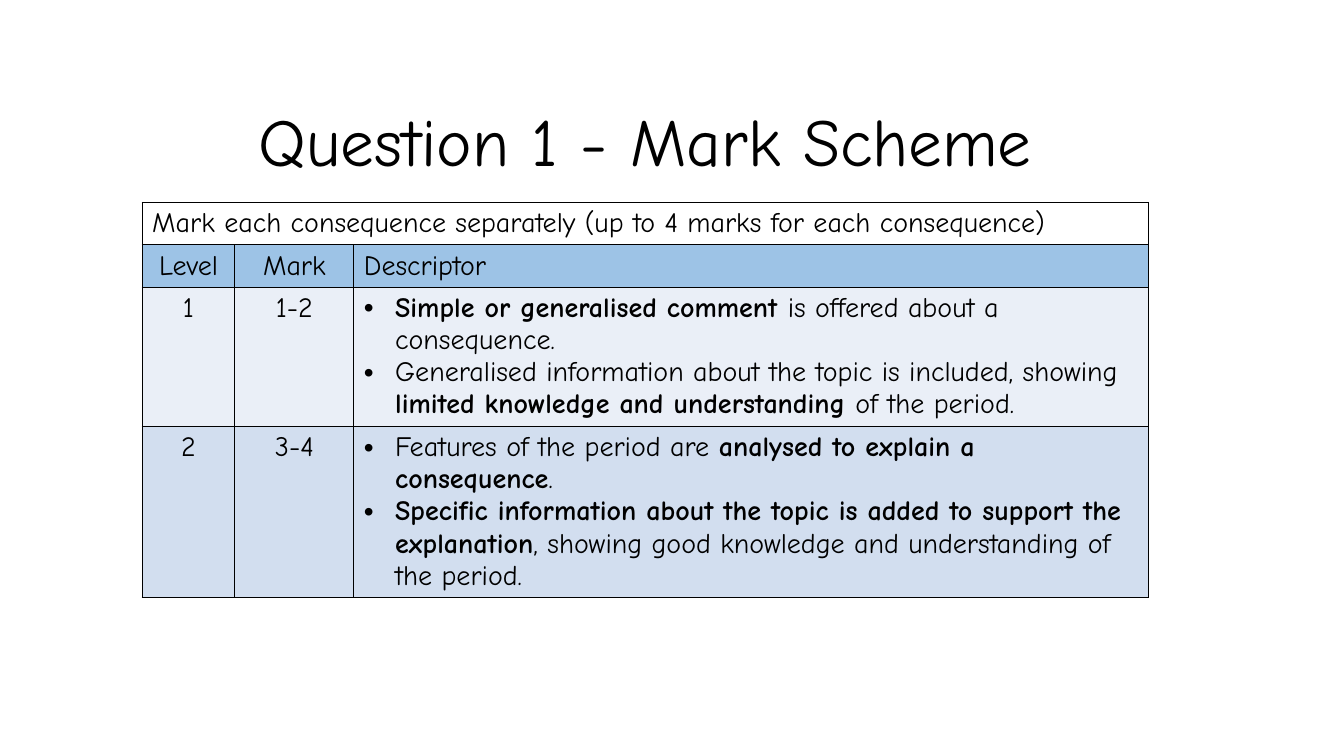
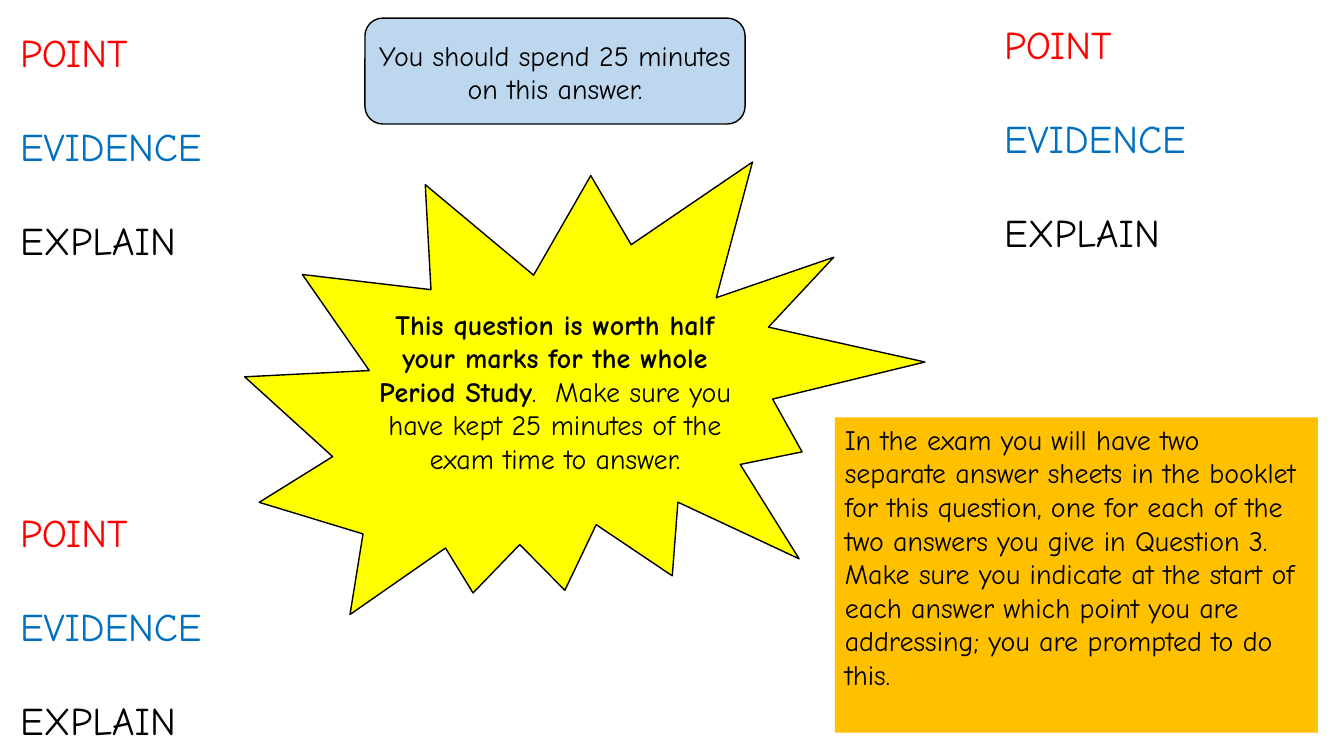
"""Build the exam mark scheme and answer advice slides."""
import pptx
import pptx.util
import pptx.dml.color
import pptx.enum.shapes
import pptx.enum.text
import pptx.oxml
import pptx.oxml.ns

Inches = pptx.util.Inches
Pt = pptx.util.Pt
RGB = pptx.dml.color.RGBColor
SHAPE = pptx.enum.shapes.MSO_SHAPE
ALIGN = pptx.enum.text.PP_ALIGN
ANCHOR = pptx.enum.text.MSO_ANCHOR

BLACK = RGB(0x00, 0x00, 0x00)
WHITE = RGB(0xFF, 0xFF, 0xFF)
RED = RGB(0xFF, 0x00, 0x00)
BLUE = RGB(0x00, 0x70, 0xC0)
YELLOW = RGB(0xFF, 0xFF, 0x00)
ORANGE = RGB(0xFF, 0xC0, 0x00)
SKY = RGB(0xBD, 0xD7, 0xEE)
HEADER = RGB(0x9D, 0xC3, 0xE6)
BAND_LIGHT = RGB(0xEA, 0xEF, 0xF7)
BAND_DARK = RGB(0xD2, 0xDE, 0xEF)


class Deck:
    font = "Comic Neue"
    body = 20
    leading = 1.2
    table_leading = 1.15

    def __init__(self):
        self.prs = pptx.Presentation()
        self.prs.slide_width = Inches(13.33)
        self.prs.slide_height = Inches(7.5)
        self.s = None

    def new_slide(self):
        self.s = self.prs.slides.add_slide(self.prs.slide_layouts[6])

    def fill_text(self, tf, paragraphs, size=body, align=ALIGN.LEFT, gap=0,
                  leading=leading, bullets=False):
        tf.word_wrap = True
        for i, runs in enumerate(paragraphs):
            p = tf.paragraphs[0] if i == 0 else tf.add_paragraph()
            p.alignment = align
            p.line_spacing = Pt(size * leading)
            p.space_before = Pt(gap if i else 0)
            if bullets:
                self.bullet(p)
            for text, bold, color in runs:
                r = p.add_run()
                r.text = text
                r.font.name = self.font
                r.font.size = Pt(size)
                r.font.bold = bold
                r.font.color.rgb = color

    def bullet(self, p):
        pPr = p._p.get_or_add_pPr()
        pPr.set("marL", str(Inches(0.31)))
        pPr.set("indent", str(-Inches(0.31)))
        ns = pptx.oxml.ns.nsdecls("a")
        pPr.append(pptx.oxml.parse_xml(f'<a:buFont {ns} typeface="Arial"/>'))
        pPr.append(pptx.oxml.parse_xml(f'<a:buChar {ns} char="•"/>'))

    def text(self, box, paragraphs, anchor=ANCHOR.TOP, **style):
        tf = self.s.shapes.add_textbox(*map(Inches, box)).text_frame
        tf.vertical_anchor = anchor
        self.fill_text(tf, paragraphs, **style)

    def title(self, box, text):
        self.text(box, [[plain(text)]], ANCHOR.MIDDLE, size=48,
                  align=ALIGN.CENTER, leading=self.table_leading)

    def shape(self, kind, box, fill, line=None, rotation=0):
        sp = self.s.shapes.add_shape(kind, *map(Inches, box))
        sp.shadow.inherit = False
        sp.rotation = rotation
        sp.fill.solid()
        sp.fill.fore_color.rgb = fill
        if line is None:
            sp.line.fill.background()
        else:
            sp.line.color.rgb = line
            sp.line.width = Pt(1)
        return sp

    def note(self, box, fill, paragraphs):
        tf = self.shape(SHAPE.RECTANGLE, box, fill).text_frame
        tf.vertical_anchor = ANCHOR.TOP
        self.fill_text(tf, paragraphs)

    def table(self, left, top, widths, heights, rows, fills):
        box = map(Inches, (left, top, sum(widths), sum(heights)))
        tbl = self.s.shapes.add_table(len(rows), len(widths), *box).table
        tbl.first_row = tbl.horz_banding = False
        for col, width in zip(tbl.columns, widths):
            col.width = Inches(width)
        for row, height in zip(tbl.rows, heights):
            row.height = Inches(height)
        for i, (row, fill) in enumerate(zip(rows, fills)):
            if len(row) == 1:
                tbl.cell(i, 0).merge(tbl.cell(i, len(widths) - 1))
            for j in range(len(widths)):
                cell = tbl.cell(i, j)
                cell.fill.solid()
                cell.fill.fore_color.rgb = fill
                self.border(cell)
                if j < len(row):
                    centred = len(row) > 1 and j < 2
                    self.fill_text(
                        cell.text_frame, row[j],
                        align=ALIGN.CENTER if centred else ALIGN.LEFT,
                        leading=self.table_leading,
                        bullets=len(row[j]) > 1)

    def border(self, cell):
        tcPr = cell._tc.get_or_add_tcPr()
        ns = pptx.oxml.ns.nsdecls("a")
        for i, side in enumerate("LRTB"):
            tcPr.insert(i, pptx.oxml.parse_xml(
                f'<a:ln{side} {ns} w="{Pt(1)}"><a:solidFill>'
                f'<a:srgbClr val="{BLACK}"/></a:solidFill></a:ln{side}>'))


def plain(text, color=BLACK):
    return text, False, color


def bold(text):
    return text, True, BLACK


def mark_scheme(deck):
    deck.new_slide()
    rows = [
        [[[plain("Mark each consequence separately "
                 "(up to 4 marks for each consequence)")]]],
        [[[plain(name)]] for name in ("Level", "Mark", "Descriptor")],
        [[[plain("1")]], [[plain("1-2")]], [
            [bold("Simple or generalised comment "),
             plain("is offered about a consequence.")],
            [plain("Generalised information about the topic is included, "
                   "showing "),
             bold("limited knowledge and understanding "),
             plain("of the period.")]]],
        [[[plain("2")]], [[plain("3-4")]], [
            [plain("Features of the period are "),
             bold("analysed to explain a consequence"), plain(".")],
            [bold("Specific information about the topic is added to support "
                  "the explanation"),
             plain(", showing good knowledge and understanding of the "
                   "period.")]]],
    ]
    deck.table(1.41, 2.01, (0.92, 1.18, 7.88), (0.42, 0.42, 1.38, 1.7), rows,
               (WHITE, HEADER, BAND_LIGHT, BAND_DARK))
    deck.title((1.9, 0.98, 9, 0.85), "Question 1 - Mark Scheme")


def answer_advice(deck):
    deck.new_slide()
    deck.shape(SHAPE.ROUNDED_RECTANGLE, (3.62, 0.18, 3.77, 1.05), SKY, BLACK)
    deck.shape(SHAPE.EXPLOSION2, (2.46, 1.31, 6.58, 5.2), YELLOW, BLACK, 11.6)
    deck.text((3.55, 0.33, 3.91, 4.48), [
        [plain("You should spend 25 minutes on this answer.")],
        [bold("This question is worth half your marks for the whole "
              "Period Study"),
         plain(".  Make sure you have kept 25 minutes of the exam time "
               "to answer.")],
    ], align=ALIGN.CENTER, gap=144)
    steps = [[plain("POINT", RED)], [plain("EVIDENCE", BLUE)],
             [plain("EXPLAIN")]]
    for left, top in ((0.1, 0.23), (0.1, 4.99), (9.86, 0.15)):
        deck.text((left, top, 3.38, 2.46), steps, size=28, gap=33.6)
    deck.note((8.28, 4.14, 4.79, 3.13), ORANGE, [
        [plain("In the exam you will have two separate answer sheets in the "
               "booklet for this question, one for each of the two answers "
               "you give in Question 3.")],
        [plain("Make sure you indicate at the start of each answer which "
               "point you are addressing; you are prompted to do this.")],
    ])


def main():
    deck = Deck()
    mark_scheme(deck)
    answer_advice(deck)
    deck.prs.save("out.pptx")


if __name__ == "__main__":
    main()
